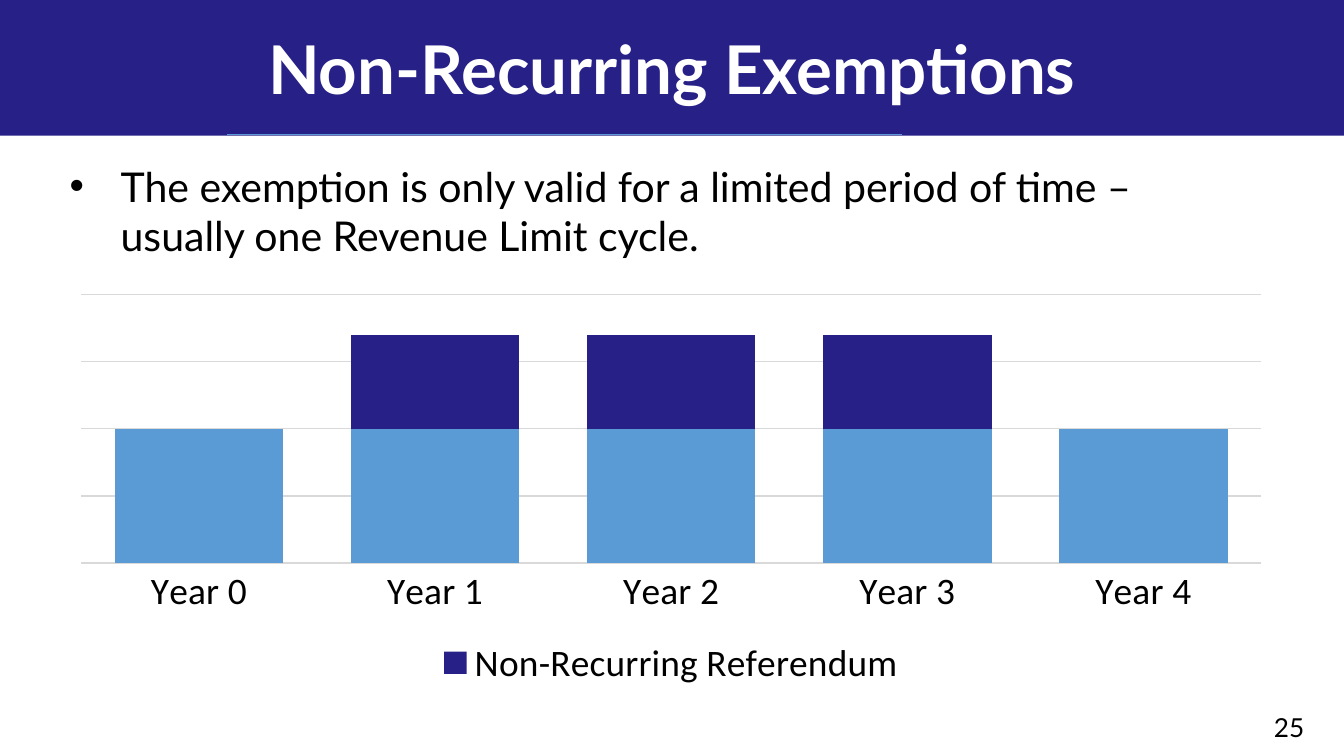
import dataclasses
import typing

import lxml.etree
import pptx
import pptx.chart.data
import pptx.dml.color
import pptx.enum.chart
import pptx.enum.shapes
import pptx.enum.text
import pptx.oxml
import pptx.oxml.ns
import pptx.util

Inches = pptx.util.Inches
Pt = pptx.util.Pt
qn = pptx.oxml.ns.qn

COLOURS = {"navy": "262087", "blue": "5B9BD5", "grid": "D9D9D9", "black": "000000", "white": "FFFFFF"}


@dataclasses.dataclass
class TextBlock:
    """A text box holding one paragraph."""

    left: float
    top: float
    width: float
    height: float
    lines: list[str]
    size: float
    colour: str = "black"
    bold: bool = False
    centred: bool = False
    bulleted: bool = False
    space_after: float = 0


@dataclasses.dataclass
class Series:
    """A named row of chart values."""

    name: str
    values: list[float]
    colour: str


TEXTS = [
    TextBlock(0.42, 1.15, 8.96, 0.84,
              ["The exemption is only valid for a limited period of time – ",
               "usually one Revenue Limit cycle."],
              22, bulleted=True, space_after=4.5),
    TextBlock(0, 0, 10, 1.01, ["Non-Recurring Exemptions"], 36, "white",
              bold=True, centred=True, space_after=30),
    TextBlock(9.38, 5.24, 0.55, 0.25, ["25"], 14),
]
YEARS = [f"Year {number}" for number in range(5)]
SERIES = [
    Series("Series 1", [100] * 5, "blue"),
    Series("Non-Recurring Referendum", [0, 70, 70, 70, 0], "navy"),
]


def rgb(name: str) -> pptx.dml.color.RGBColor:
    """Look up a colour by name."""
    return pptx.dml.color.RGBColor.from_string(COLOURS[name])


def set_line(line: typing.Any, colour: str, width: float) -> None:
    """Give a line its colour and width."""
    line.color.rgb = rgb(colour)
    line.width = Pt(width)


def set_font(font: typing.Any, name: str, size: float, colour: str, bold: bool = False) -> None:
    """Give a font its face, size, colour and weight."""
    font.name = name
    font.size = Pt(size)
    font.color.rgb = rgb(colour)
    font.bold = bold


def add_band(page: typing.Any) -> None:
    """Draw the title band."""
    band = page.shapes.add_shape(pptx.enum.shapes.MSO_SHAPE.RECTANGLE,
                                 Inches(-0.01), Inches(0), Inches(10.01), Inches(1.01))
    band.shadow.inherit = False
    band.fill.solid()
    band.fill.fore_color.rgb = rgb("navy")
    band.line.fill.background()


def add_rule(page: typing.Any) -> None:
    """Draw the thin line at the foot of the band."""
    rule = page.shapes.add_connector(pptx.enum.shapes.MSO_CONNECTOR.STRAIGHT,
                                     Inches(1.69), Inches(1), Inches(6.71), Inches(1))
    set_line(rule.line, "blue", 0.5)
    lxml.etree.SubElement(rule._element.spPr, qn("a:effectLst"))


def add_text(page: typing.Any, block: TextBlock) -> None:
    """Draw one text block."""
    box = page.shapes.add_textbox(Inches(block.left), Inches(block.top),
                                  Inches(block.width), Inches(block.height))
    frame = box.text_frame
    frame.word_wrap = True
    para = frame.paragraphs[0]
    if block.centred:
        frame.vertical_anchor = pptx.enum.text.MSO_ANCHOR.MIDDLE
        para.alignment = pptx.enum.text.PP_ALIGN.CENTER
    if block.bulleted:
        properties = para._p.get_or_add_pPr()
        properties.set("marL", str(Inches(0.38)))
        properties.set("indent", str(Inches(-0.38)))
        lxml.etree.SubElement(properties, qn("a:buFont")).set("typeface", "Arial")
        lxml.etree.SubElement(properties, qn("a:buChar")).set("char", "•")
    para.space_after = Pt(block.space_after)
    for index, line in enumerate(block.lines):
        if index:
            para.add_line_break()
        span = para.add_run()
        span.text = line
        set_font(span.font, "Lato", block.size, block.colour, block.bold)


def set_plot_layout(chart: typing.Any, **fractions: float) -> None:
    """Fix the inner plot area as fractions of the chart."""
    area = chart._chartSpace.chart.plotArea
    for old in area.findall(qn("c:layout")):
        area.remove(old)
    layout = lxml.etree.Element(qn("c:layout"))
    manual = lxml.etree.SubElement(layout, qn("c:manualLayout"))
    settings = {"layoutTarget": "inner", "xMode": "edge", "yMode": "edge", **fractions}
    for tag, value in settings.items():
        lxml.etree.SubElement(manual, qn(f"c:{tag}")).set("val", str(value))
    area.insert(0, layout)


def add_legend(chart: typing.Any) -> None:
    """Show the legend without its first entry."""
    chart.has_legend = True
    legend = chart.legend
    legend.position = pptx.enum.chart.XL_LEGEND_POSITION.BOTTOM
    legend.include_in_layout = False
    set_font(legend.font, "Calibri", 20, "black")
    entry = lxml.etree.Element(qn("c:legendEntry"))
    for tag, value in (("idx", "0"), ("delete", "1")):
        lxml.etree.SubElement(entry, qn(f"c:{tag}")).set("val", value)
    legend._element.find(qn("c:legendPos")).addnext(entry)


def add_chart(page: typing.Any) -> None:
    """Draw the stacked column chart."""
    data = pptx.chart.data.CategoryChartData()
    data.categories = YEARS
    for series in SERIES:
        data.add_series(series.name, series.values)
    chart = page.shapes.add_chart(pptx.enum.chart.XL_CHART_TYPE.COLUMN_STACKED,
                                  Inches(0.42), Inches(2.13), Inches(9.15), Inches(3.03), data).chart
    chart.has_title = False
    set_font(chart.font, "Calibri", 20, "black")
    plot = chart.plots[0]
    plot.vary_by_categories = False
    plot.gap_width = 40
    plot.overlap = 100
    for drawn, series in zip(plot.series, SERIES):
        drawn.format.fill.solid()
        drawn.format.fill.fore_color.rgb = rgb(series.colour)
    years = chart.category_axis
    years.major_tick_mark = pptx.enum.chart.XL_TICK_MARK.NONE
    set_line(years.format.line, "grid", 0.75)
    set_font(years.tick_labels.font, "Calibri", 20, "black")
    amounts = chart.value_axis
    amounts.visible = False
    amounts.minimum_scale = 0
    amounts.maximum_scale = 200
    amounts.major_unit = 50
    amounts.has_major_gridlines = True
    set_line(amounts.major_gridlines.format.line, "grid", 0.75)
    set_plot_layout(chart, x=0.02, y=0.02, w=0.96, h=0.66)
    add_legend(chart)


def main() -> None:
    """Build the slide and save it."""
    deck = pptx.Presentation()
    deck.slide_width = Inches(10)
    deck.slide_height = Inches(10 * 9 / 16)
    page = deck.slides.add_slide(deck.slide_layouts[6])
    add_band(page)
    add_rule(page)
    for block in TEXTS:
        add_text(page, block)
    add_chart(page)
    deck.save("out.pptx")


if __name__ == "__main__":
    main()
